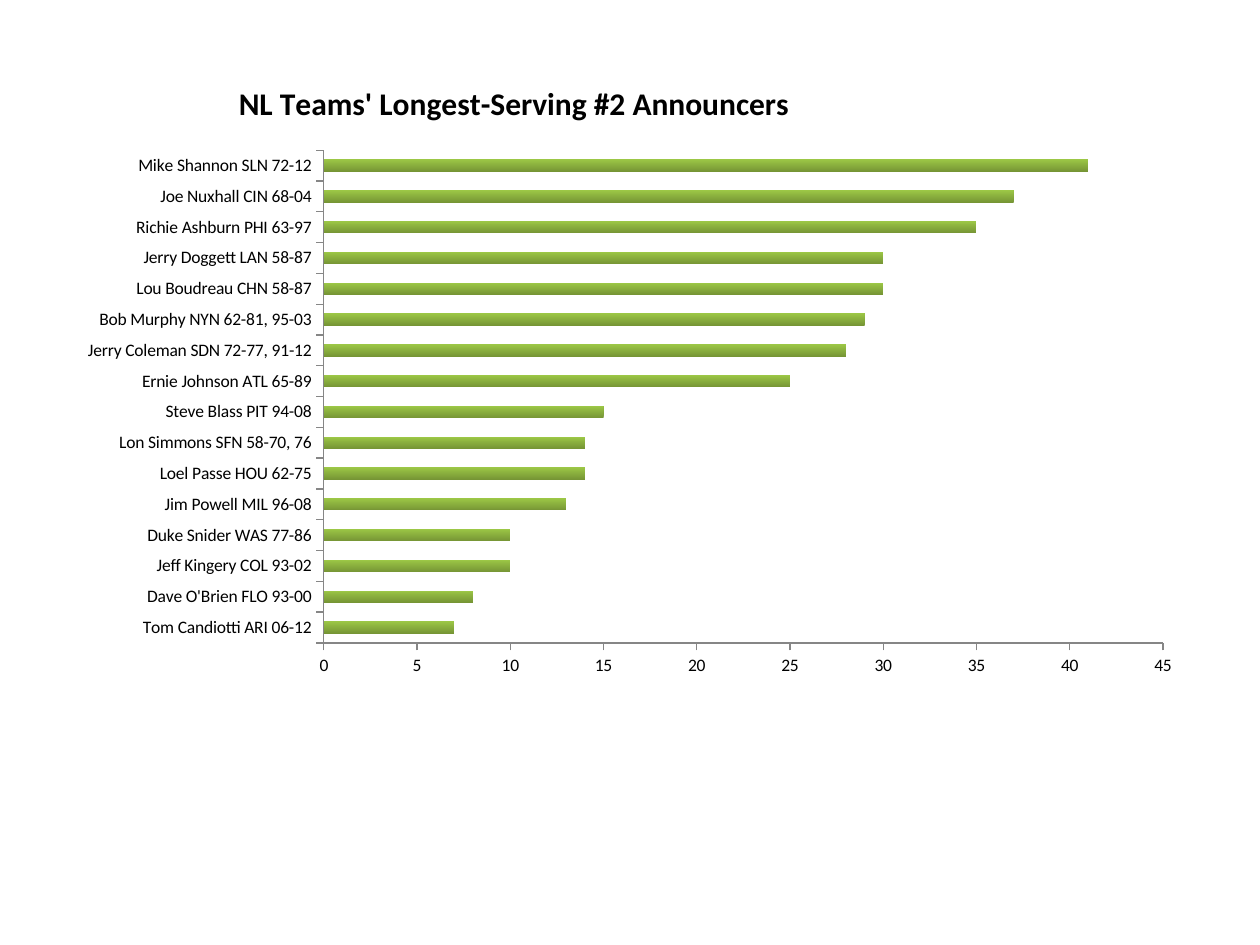
import dataclasses

import pptx
import pptx.chart.data
import pptx.dml.color
import pptx.enum.chart
import pptx.oxml
import pptx.oxml.ns
import pptx.util

Pt = pptx.util.Pt
RGB = pptx.dml.color.RGBColor.from_string
qn = pptx.oxml.ns.qn


@dataclasses.dataclass(frozen=True)
class Theme:
    face: str = "Calibri"
    ink: str = "000000"
    axis: str = "868686"
    dark: str = "769535"
    light: str = "9CC746"
    head: int = 18
    label: int = 10


THEME = Theme()
TITLE = "NL Teams' Longest-Serving #2 Announcers"
YEARS = [
    ("Tom Candiotti ARI 06-12", 7),
    ("Dave O'Brien FLO 93-00", 8),
    ("Jeff Kingery COL 93-02", 10),
    ("Duke Snider WAS 77-86", 10),
    ("Jim Powell MIL 96-08", 13),
    ("Loel Passe HOU 62-75", 14),
    ("Lon Simmons SFN 58-70, 76", 14),
    ("Steve Blass PIT 94-08", 15),
    ("Ernie Johnson ATL 65-89", 25),
    ("Jerry Coleman SDN 72-77, 91-12", 28),
    ("Bob Murphy NYN 62-81, 95-03", 29),
    ("Lou Boudreau CHN 58-87", 30),
    ("Jerry Doggett LAN 58-87", 30),
    ("Richie Ashburn PHI 63-97", 35),
    ("Joe Nuxhall CIN 68-04", 37),
    ("Mike Shannon SLN 72-12", 41),
]


def style(font, size, bold=False):
    font.name = THEME.face
    font.size = Pt(size)
    font.bold = bold
    font.color.rgb = RGB(THEME.ink)


def place(node, spot, inner=False, **sizes):
    for old in node.findall(qn("c:layout")):
        node.remove(old)
    target = '<c:layoutTarget val="inner"/>' if inner else ""
    modes = "".join(f'<c:{key}Mode val="edge"/>' for key in "xy")
    parts = "".join(f'<c:{key} val="{val}"/>' for key, val in sizes.items())
    space = pptx.oxml.ns.nsdecls("c")
    node.insert(spot, pptx.oxml.parse_xml(
        f"<c:layout {space}><c:manualLayout>{target}{modes}{parts}"
        "</c:manualLayout></c:layout>"))


def add_title(chart):
    chart.has_title = True
    title = chart.chart_title
    title.include_in_layout = False
    run = title.text_frame.paragraphs[0].add_run()
    run.text = TITLE
    style(run.font, THEME.head, True)
    place(title._element, 1, x=0.15, y=0.02)


def set_axis(axis):
    axis.has_major_gridlines = False
    axis.major_tick_mark = pptx.enum.chart.XL_TICK_MARK.OUTSIDE
    axis.minor_tick_mark = pptx.enum.chart.XL_TICK_MARK.NONE
    axis.format.line.color.rgb = RGB(THEME.axis)
    axis.format.line.width = Pt(0.75)
    style(axis.tick_labels.font, THEME.label)


def fill_bars(plot):
    plot.gap_width = 150
    plot.vary_by_categories = False
    fill = plot.series[0].format.fill
    fill.gradient()
    fill.gradient_angle = 90
    for stop, tone in zip(fill.gradient_stops, (THEME.dark, THEME.light)):
        stop.color.rgb = RGB(tone)


def add_bars(slide, left, top, width, height):
    data = pptx.chart.data.CategoryChartData()
    names, totals = zip(*YEARS)
    data.categories = names
    data.add_series(TITLE, totals)
    kind = pptx.enum.chart.XL_CHART_TYPE.BAR_CLUSTERED
    chart = slide.shapes.add_chart(
        kind, Pt(left), Pt(top), Pt(width), Pt(height), data).chart
    style(chart.font, THEME.label)
    chart.has_legend = False
    add_title(chart)
    for axis in (chart.category_axis, chart.value_axis):
        set_axis(axis)
    chart.value_axis.minimum_scale = 0
    chart.value_axis.maximum_scale = 45
    chart.value_axis.major_unit = 5
    fill_bars(chart.plots[0])
    area = chart._chartSpace.find(".//" + qn("c:plotArea"))
    place(area, 0, True, x=0.23, y=0.14, w=0.74, h=0.79)


def main():
    deck = pptx.Presentation()
    deck.slide_width = Pt(720)
    deck.slide_height = Pt(540)
    slide = deck.slides.add_slide(deck.slide_layouts[6])
    add_bars(slide, 36, 36, 648, 356.4)
    deck.save("out.pptx")


if __name__ == "__main__":
    main()
